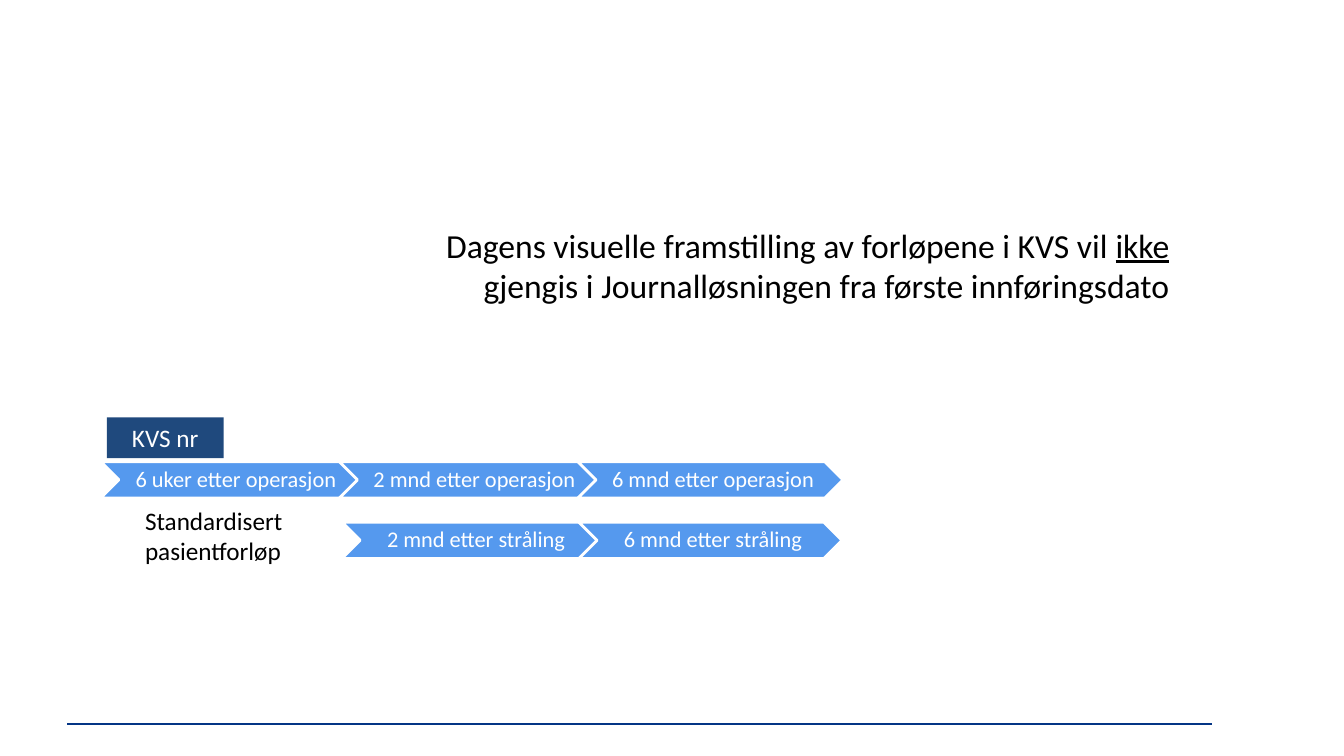
"""Build a slide on how the care pathways are displayed after the system launch."""
from pptx import Presentation
from pptx.dml.color import RGBColor
from pptx.enum.shapes import MSO_CONNECTOR, MSO_SHAPE
from pptx.enum.text import MSO_ANCHOR, PP_ALIGN
from pptx.oxml.ns import qn
from pptx.util import Pt

COLORS = {
    "rule": "043585",
    "step": "5599EE",
    "label": "1F497D",
    "white": "FFFFFF",
    "black": "000000",
}


def add_run(paragraph, text, size, color, underline=None):
    run = paragraph.add_run()
    run.text = text
    run.font.name = "Calibri"
    run.font.size = Pt(size)
    run.font.color.rgb = RGBColor.from_string(COLORS[color])
    run.font.underline = underline


def add_filled_shape(kind, left, top, width, height, color):
    shape = slide.shapes.add_shape(kind, Pt(left), Pt(top), Pt(width), Pt(height))
    shape.shadow.inherit = False
    shape.fill.solid()
    shape.fill.fore_color.rgb = RGBColor.from_string(COLORS[color])
    return shape


presentation = Presentation()
presentation.slide_width = Pt(960)
presentation.slide_height = Pt(540)
slide = presentation.slides.add_slide(presentation.slide_layouts[6])

rule = slide.shapes.add_connector(
    MSO_CONNECTOR.STRAIGHT, Pt(48.2), Pt(517), Pt(865.4), Pt(517)
)
rule.line.color.rgb = RGBColor.from_string(COLORS["rule"])
rule.line.width = Pt(1.25)
rule_properties = rule._element.spPr
rule_properties.append(rule_properties.makeelement(qn("a:effectLst"), {}))

message = slide.shapes.add_textbox(Pt(275.8), Pt(157), Pt(566.6), Pt(67.7))
message.text_frame.word_wrap = True
paragraph = message.text_frame.paragraphs[0]
paragraph.alignment = PP_ALIGN.RIGHT
add_run(paragraph, "Dagens visuelle framstilling av forløpene i KVS vil ", 24, "black")
add_run(paragraph, "ikke", 24, "black", underline=True)
add_run(paragraph, " gjengis i Journalløsningen fra første innføringsdato", 24, "black")

step_height = 25.9
step_rows = [
    (72, 329.8, 189.4, 170.4,
     ["6 uker etter operasjon", "2 mnd etter operasjon", "6 mnd etter operasjon"]),
    (244.3, 373, 187.9, 169.2,
     ["2 mnd etter stråling", "6 mnd etter stråling"]),
]
for row_left, top, width, pitch, labels in step_rows:
    for index, label in enumerate(labels):
        left = row_left + index * pitch
        chevron = add_filled_shape(
            MSO_SHAPE.CHEVRON, left, top, width, step_height, "step"
        )
        chevron.line.color.rgb = RGBColor.from_string(COLORS["white"])
        chevron.line.width = Pt(2)

        caption = slide.shapes.add_textbox(
            Pt(left + step_height / 2), Pt(top), Pt(width - step_height), Pt(step_height)
        )
        frame = caption.text_frame
        frame.word_wrap = True
        frame.vertical_anchor = MSO_ANCHOR.MIDDLE
        frame.margin_left = Pt(5)
        frame.margin_top = frame.margin_right = frame.margin_bottom = Pt(1.4)
        paragraph = frame.paragraphs[0]
        paragraph.alignment = PP_ALIGN.CENTER
        paragraph.line_spacing = 0.9
        add_run(paragraph, label, 16, "white")

pathway = slide.shapes.add_textbox(Pt(96.5), Pt(357.1), Pt(147.6), Pt(51.1))
pathway.text_frame.word_wrap = True
add_run(pathway.text_frame.paragraphs[0], "Standardisert pasientforløp", 18, "black")

number_label = add_filled_shape(MSO_SHAPE.RECTANGLE, 76.3, 298.1, 83.5, 29.1, "label")
number_label.line.fill.background()
number_label.text_frame.vertical_anchor = MSO_ANCHOR.TOP
paragraph = number_label.text_frame.paragraphs[0]
paragraph.alignment = PP_ALIGN.CENTER
add_run(paragraph, "KVS nr", 18, "white")

presentation.save("out.pptx")
